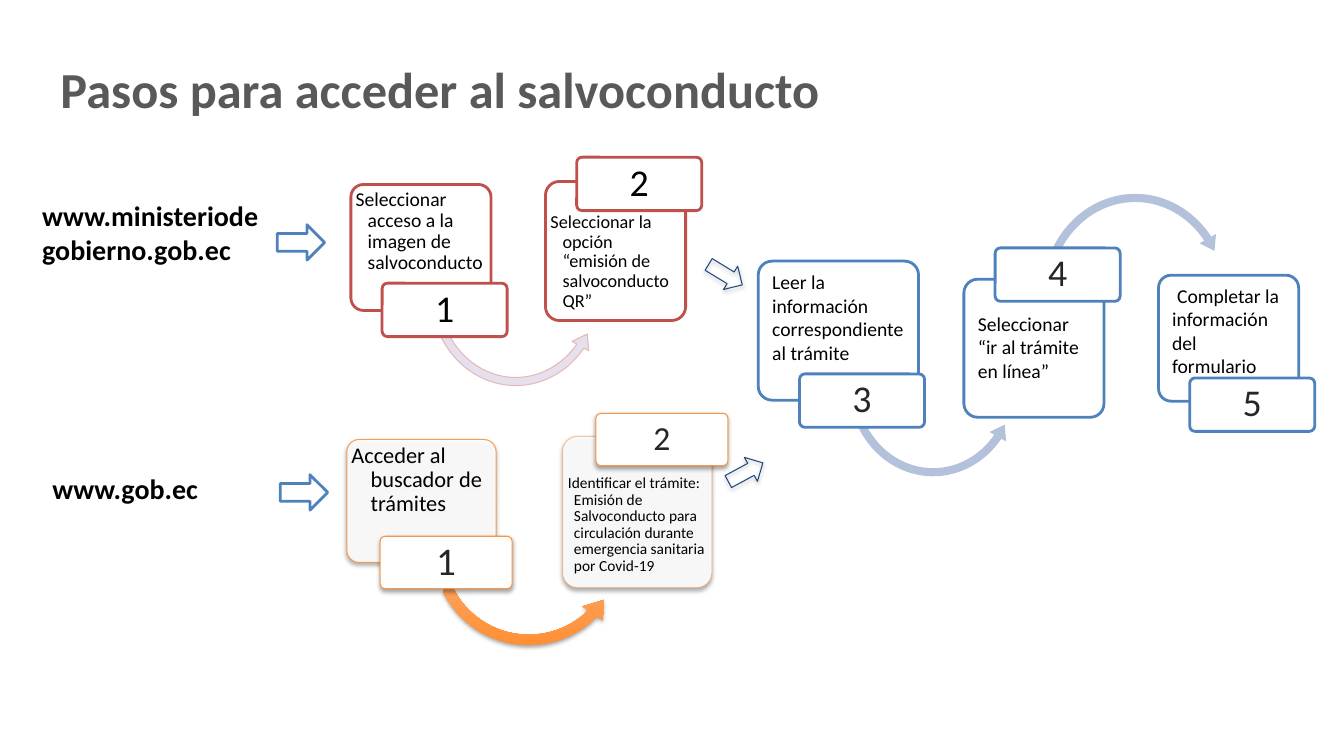
from dataclasses import dataclass
from lxml.etree import SubElement as Sub
from pptx import Presentation
from pptx.dml.color import RGBColor as Color
from pptx.enum.shapes import MSO_SHAPE as Kind
from pptx.enum.text import MSO_ANCHOR as Anchor, PP_ALIGN as Align
from pptx.oxml.ns import qn
from pptx.util import Pt

SCALE = 9144


@dataclass(frozen=True)
class Theme:
    font: str = "Calibri"
    white: str = "FFFFFF"
    black: str = "000000"
    ink: str = "262626"
    grey: str = "595959"
    red: str = "C0504D"
    rose: str = "E6B9B8"
    mauve: str = "E6E0EC"
    blue: str = "4F81BD"
    pale: str = "B3C1DB"
    navy: str = "1F497D"
    gold: str = "F79646"
    warm: tuple = ("FF8D30", "FFCDB7")
    title: int = 36
    link: int = 20
    body: int = 14
    small: int = 13
    large: int = 16
    tiny: int = 11
    badge: int = 27
    big: int = 28
    mid: int = 24
    thin: float = 0.75
    thick: float = 2


def px(count):
    return round(count * SCALE)


class Deck:
    def __init__(self, theme):
        self.theme = theme
        self.file = Presentation()
        self.file.slide_width, self.file.slide_height = px(1333), px(750)
        self.slide = self.file.slides.add_slide(self.file.slide_layouts[6])

    def text(self, shape, words, size, tint, pads=(10, 5, 10, 5), bold=False,
             hang=0, first=0, lead=None, align=Align.LEFT, anchor=Anchor.TOP):
        frame = shape.text_frame
        frame.word_wrap = True
        frame.vertical_anchor = anchor
        (frame.margin_left, frame.margin_top,
         frame.margin_right, frame.margin_bottom) = map(px, pads)
        para = frame.paragraphs[0]
        para.alignment = align
        if lead:
            para.line_spacing = lead
        if hang or first:
            props = para._p.get_or_add_pPr()
            props.set("marL", str(px(hang)))
            props.set("indent", str(px(first - hang)))
        run = para.add_run()
        run.text = words
        run.font.name, run.font.size, run.font.bold = self.theme.font, Pt(size), bold
        run.font.color.rgb = Color.from_string(tint)

    def label(self, place, words, size, tint, **style):
        box = self.slide.shapes.add_textbox(*map(px, place))
        self.text(box, words, size, tint, bold=True, **style)

    def shade(self, shape):
        glow = Sub(shape._element.spPr.find(qn("a:effectLst")), qn("a:outerShdw"),
                   blurRad="40000", dist="23000", dir="5400000", rotWithShape="0")
        tint = Sub(glow, qn("a:srgbClr"), val=self.theme.black)
        Sub(tint, qn("a:alpha"), val="35000")

    def fade(self, props, share):
        tint = props.find(qn("a:solidFill"))[0]
        Sub(tint, qn("a:alpha"), val=str(share * 1000))

    def shape(self, kind, place, fill=None, line=None, width=2, adjust=(),
              shade=False, turn=0):
        item = self.slide.shapes.add_shape(kind, *map(px, place))
        item.shadow.inherit = False
        item.rotation = turn
        for spot, value in enumerate(adjust):
            item.adjustments[spot] = value
        if isinstance(fill, tuple):
            item.fill.gradient()
            item.fill.gradient_angle = 90
            for stop, tint in zip(item.fill.gradient_stops, fill):
                stop.color.rgb = Color.from_string(tint)
        elif fill:
            item.fill.solid()
            item.fill.fore_color.rgb = Color.from_string(fill)
        else:
            item.fill.background()
        if line:
            item.line.color.rgb = Color.from_string(line)
            item.line.width = Pt(width)
        else:
            item.line.fill.background()
        if shade:
            self.shade(item)
        return item

    def card(self, place, words, line, size, clear=None, **style):
        soft = clear is not None
        width = self.theme.thin if soft else self.theme.thick
        box = self.shape(Kind.ROUNDED_RECTANGLE, place, self.theme.white, line,
                         width, (0.1,), soft)
        if soft:
            props = box._element.spPr
            self.fade(props, 90)
            self.fade(props.find(qn("a:ln")), clear)
        self.text(box, words, size, self.theme.black, **style)

    def badge(self, left, top, words, line, tint, size, soft=False):
        area = (131, 52) if soft else (124, 53)
        width = self.theme.thin if soft else self.theme.thick
        box = self.shape(Kind.ROUNDED_RECTANGLE, (left, top, *area),
                         self.theme.white, line, width, (0.1,), soft)
        self.text(box, words, size, tint, (6, 4, 6, 4), lead=0.9,
                  align=Align.CENTER, anchor=Anchor.MIDDLE)

    def save(self):
        self.file.save("out.pptx")


def main():
    look = Theme()
    deck = Deck(look)
    under, over = Kind.LEFT_CIRCULAR_ARROW, Kind.CIRCULAR_ARROW
    wide = (0.051, 6.582, 26.896, 92.803, 0.06)
    low = (0.045, 5.767, 23.522, 90.245, 0.053)
    high = (0.041, 5.191, 193.053, 125.755, 0.048)

    deck.label((48, 52, 1179, 71), "Pasos para acceder al salvoconducto",
               look.title, look.grey, pads=(12, 6, 12, 6), anchor=Anchor.MIDDLE)

    deck.card((344, 436, 148, 122), "Acceder al buscador de trámites", look.gold,
              look.large, 90, pads=(1, 1, 1, 1), hang=19, lead=0.9)
    deck.shape(under, (423, 444, 203, 203), look.warm, adjust=wide, shade=True)
    deck.badge(377, 532, "1", look.gold, look.ink, look.big, True)
    deck.card((558, 433, 148, 150),
              "Identificar el trámite: Emisión de Salvoconducto para circulación "
              "durante emergencia sanitaria por Covid-19", look.gold, look.tiny,
              50, pads=(1, 34, 2, 1), hang=6, lead=0.9)
    deck.badge(591, 410, "2", look.gold, look.ink, look.mid, True)

    deck.card((348, 183, 139, 125), "Seleccionar acceso a la imagen de salvoconducto",
              look.red, look.body, pads=(1, 1, 1, 27), hang=12, lead=0.9)
    deck.shape(under, (422, 194, 179, 194), look.mauve, look.rose, look.thin, low)
    deck.badge(379, 281, "1", look.red, look.black, look.badge)
    deck.card((541, 180, 139, 138),
              "Seleccionar la opción “emisión de salvoconducto QR”",
              look.red, look.small, pads=(1, 27, 1, 1), hang=12, lead=0.9)
    deck.badge(572, 156, "2", look.red, look.black, look.badge)

    deck.card((752, 259, 159, 138), "Leer la información correspondiente al trámite",
              look.blue, look.body)
    deck.shape(under, (836, 284, 179, 194), look.pale, adjust=low)
    deck.badge(793, 371, "3", look.blue, look.ink, look.badge)
    deck.card((956, 277, 139, 137), "Seleccionar “ir al trámite en línea”",
              look.blue, look.body, pads=(10, 28, 10, 5))
    deck.shape(over, (1028, 187, 196, 213), look.pale, adjust=high)
    deck.badge(987, 246, "4", look.blue, look.ink, look.badge)
    deck.card((1149, 273, 139, 125), "Completar la información del formulario",
              look.blue, look.body, first=5)
    deck.badge(1180, 375, "5", look.blue, look.ink, look.badge)

    deck.label((32, 192, 235, 77), "www.ministeriodegobierno.gob.ec",
               look.link, look.black)
    deck.label((42, 463, 211, 44), "www.gob.ec", look.link, look.black)
    for left, top in ((275, 223), (278, 471)):
        deck.shape(Kind.RIGHT_ARROW, (left, top, 47, 35), line=look.blue)
    for left, top, turn in ((700, 259, 31.2), (720, 455, 331.6)):
        deck.shape(Kind.RIGHT_ARROW, (left, top, 39, 27), line=look.navy,
                   width=look.thin, shade=True, turn=turn)
    deck.save()


if __name__ == "__main__":
    main()
